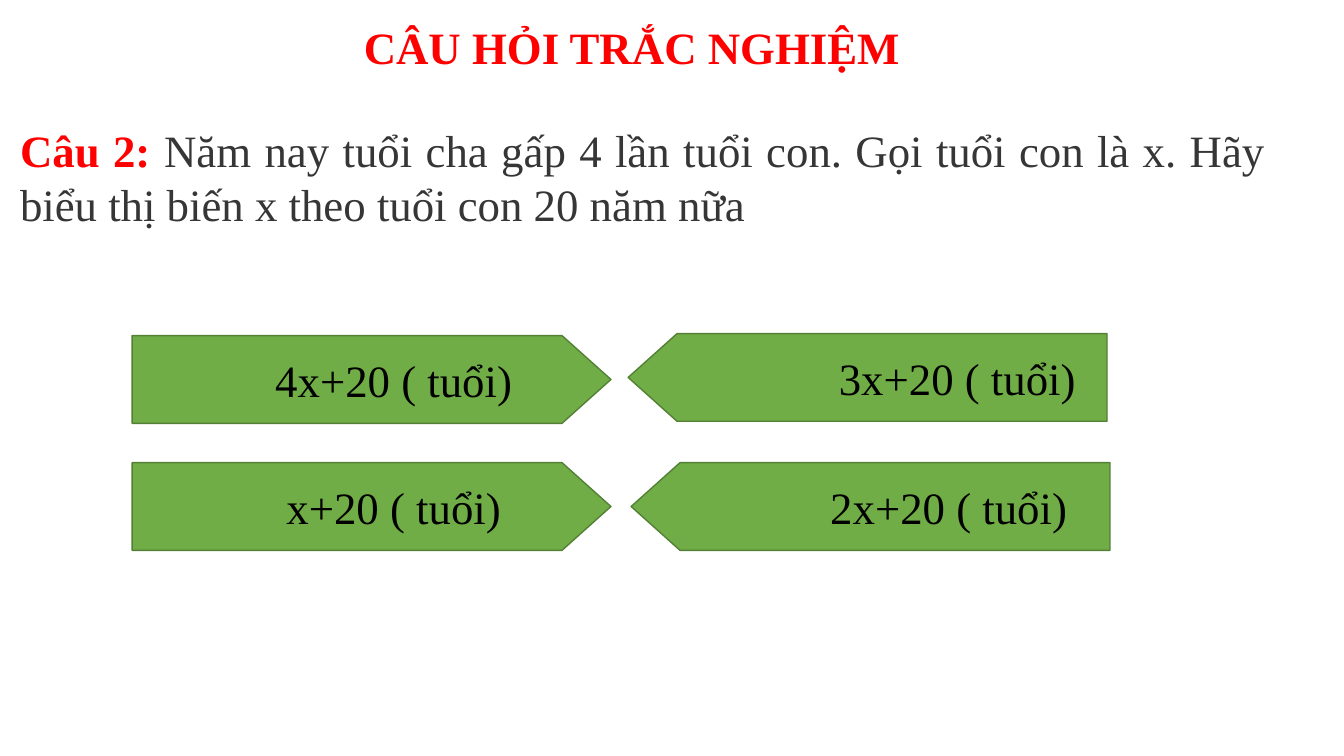
from pptx import Presentation
from pptx import util as u
from pptx.dml.color import RGBColor
from pptx.enum import text

RED = RGBColor(0xFF, 0x00, 0x00)
GRAY = RGBColor(0x36, 0x36, 0x36)
BLACK = RGBColor(0x00, 0x00, 0x00)
GREEN = RGBColor(0x70, 0xAD, 0x47)
DARK_GREEN = RGBColor(0x53, 0x80, 0x35)

FONT = "Times New Roman"
WIDTH, HEIGHT = u.Inches(13.33), u.Inches(7.5)

# Answer arrows, in percent of the slide's width or height
ARROW_WIDTH, ARROW_HEIGHT, TIP = 35.63, 11.6, 3.64
# Wording, left, top, text indent, points right
ANSWERS = [
    ("x+20 ( tuổi)", 9.83, 61.2, 3.3, True),
    ("4x+20 ( tuổi)", 9.83, 44.4, 3.3, True),
    ("3x+20 ( tuổi)", 46.74, 44.13, 13.35, False),
    ("2x+20 ( tuổi)", 46.96, 61.2, 11.63, False),
]


def across(percent):
    return u.Emu(round(WIDTH * percent / 100))


def down(percent):
    return u.Emu(round(HEIGHT * percent / 100))


def format_run(run, color, bold=False):
    run.font.name = FONT
    run.font.size = u.Pt(32)
    run.font.bold = bold
    run.font.color.rgb = color


def add_text(slide, left, top, width, height, pieces, alignment):
    """Add a text box; pieces are (wording, color, bold)."""
    box = slide.shapes.add_textbox(
        across(left), down(top), across(width), down(height))
    box.text_frame.word_wrap = True
    paragraph = box.text_frame.paragraphs[0]
    paragraph.alignment = alignment
    for wording, color, bold in pieces:
        run = paragraph.add_run()
        run.text = wording
        format_run(run, color, bold)


def add_answer(slide, wording, left, top, indent, points_right):
    # Outline from the flat end to the tip and back
    right = left + ARROW_WIDTH
    if points_right:
        flat, shoulder, tip = left, right - TIP, right
    else:
        flat, shoulder, tip = right, left + TIP, left
    bottom = top + ARROW_HEIGHT
    corners = [(shoulder, top), (tip, top + ARROW_HEIGHT / 2),
               (shoulder, bottom), (flat, bottom)]
    builder = slide.shapes.build_freeform(across(flat), down(top))
    builder.add_line_segments([(across(x), down(y)) for x, y in corners])
    shape = builder.convert_to_shape()
    shape.shadow.inherit = False
    shape.fill.solid()
    shape.fill.fore_color.rgb = GREEN
    shape.line.color.rgb = DARK_GREEN
    shape.line.width = u.Pt(1)

    # Centred wording, pushed right by the left margin
    frame = shape.text_frame
    frame.text = wording
    frame.word_wrap = True
    frame.vertical_anchor = text.MSO_ANCHOR.MIDDLE
    frame.margin_left = u.Inches(0.1) + across(indent)
    paragraph = frame.paragraphs[0]
    paragraph.alignment = text.PP_ALIGN.CENTER
    format_run(paragraph.runs[0], BLACK)


def main():
    presentation = Presentation()
    presentation.slide_width, presentation.slide_height = WIDTH, HEIGHT
    slide = presentation.slides.add_slide(presentation.slide_layouts[6])

    # Title
    add_text(slide, 26.33, 2, 46.14, 8.53,
             [("CÂU HỎI TRẮC NGHIỆM", RED, True)], text.PP_ALIGN.LEFT)

    # Question
    question = ("Năm nay tuổi cha gấp 4 lần tuổi con. Gọi tuổi con là x. "
                "Hãy biểu thị biến x theo tuổi con 20 năm nữa")
    add_text(slide, 0.75, 15.6, 94.22, 15.73,
             [("Câu 2: ", RED, True), (question, GRAY, False)],
             text.PP_ALIGN.JUSTIFY)

    # Answers
    for answer in ANSWERS:
        add_answer(slide, *answer)

    presentation.save("out.pptx")


if __name__ == "__main__":
    main()
